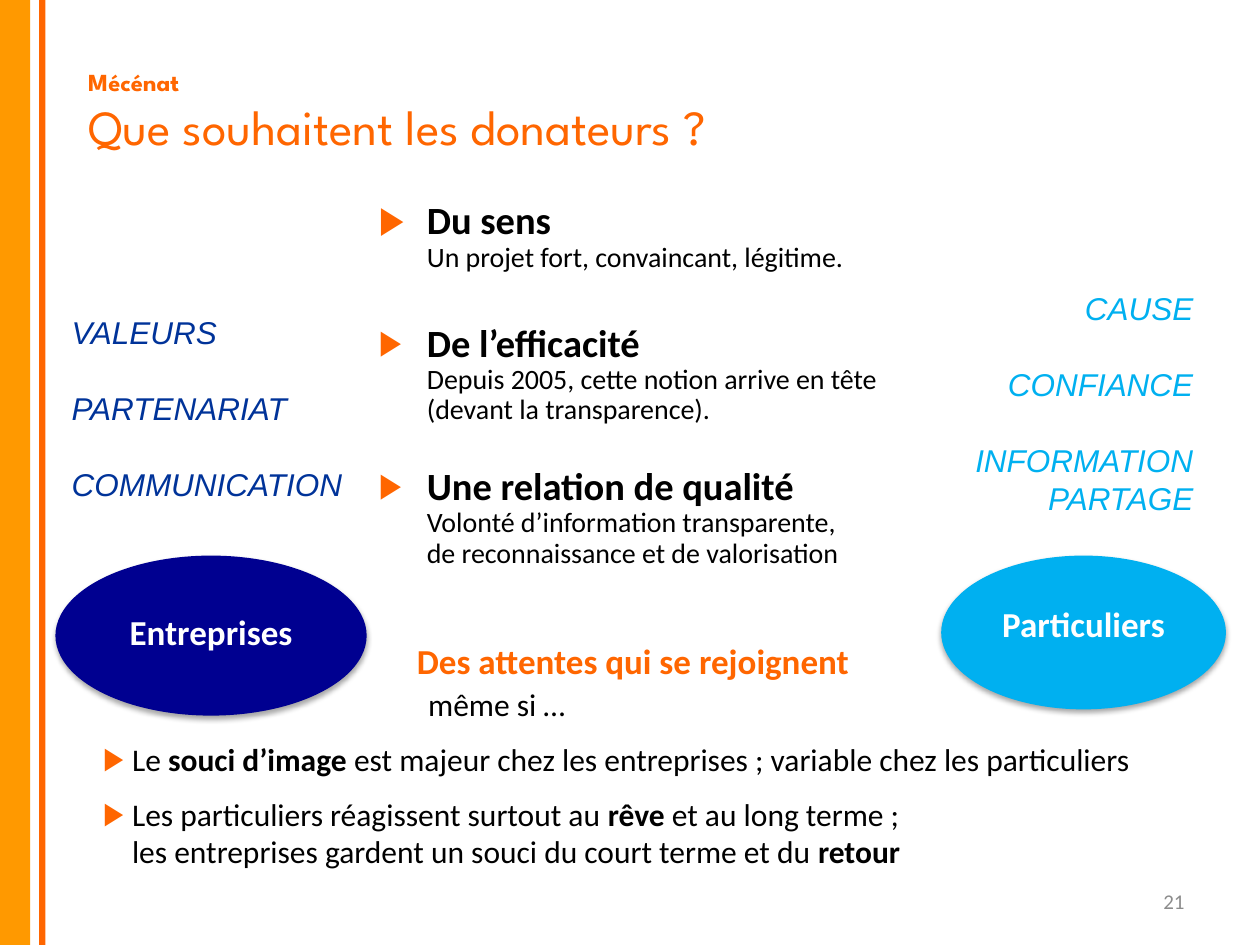
from lxml import etree
from pptx import Presentation
from pptx.dml.color import RGBColor
from pptx.enum.shapes import MSO_SHAPE
from pptx.enum.text import MSO_ANCHOR, MSO_AUTO_SIZE, PP_ALIGN
from pptx.oxml.ns import qn
from pptx.util import Inches, Pt

COLORS = {"amber": "FF9900", "orange": "FF6600", "blue": "003399", "navy": "000090",
          "sky": "00B0F0", "black": "000000", "white": "FFFFFF", "gray": "8C8C8C"}


def add_runs(p, runs, color, font="Calibri", italic=False):
    """Fill a paragraph with (text, size, bold) runs; a newline is a line break."""
    for text, size, bold in runs:
        for i, part in enumerate(text.split("\n")):
            if i:
                p.add_line_break()
            if not part:
                continue
            r = p.add_run()
            r.text = part
            r.font.name, r.font.size = font, Pt(size)
            r.font.bold, r.font.italic = bold, italic
            r.font.color.rgb = RGBColor.from_string(COLORS[color])


def set_bullet(p, indent, percent=100):
    """Give a paragraph an orange triangle bullet with a hanging indent."""
    pPr = p._p.get_or_add_pPr()
    pPr.set("marL", str(Inches(indent)))
    pPr.set("indent", str(-Inches(indent)))
    clr = etree.SubElement(pPr, qn("a:buClr"))
    etree.SubElement(clr, qn("a:srgbClr"), val=COLORS["orange"])
    etree.SubElement(pPr, qn("a:buSzPct"), val=str(percent * 1000))
    etree.SubElement(pPr, qn("a:buFont"), typeface="Arial")
    etree.SubElement(pPr, qn("a:buChar"), char="▶")


prs = Presentation()
prs.slide_width, prs.slide_height = Inches(10), Inches(7.5)
s = prs.slides.add_slide(prs.slide_layouts[5])

# Side bars
for left, width, color in ((0, 0.24, "amber"), (0.31, 0.05, "orange")):
    sp = s.shapes.add_shape(MSO_SHAPE.RECTANGLE, Inches(left), 0, Inches(width), Inches(7.5))
    sp.shadow.inherit = False
    sp.fill.solid()
    sp.fill.fore_color.rgb = RGBColor.from_string(COLORS[color])
    sp.line.fill.background()

# Title
title = s.shapes.title
title.left, title.top, title.width, title.height = map(Inches, (0.6, 0.26, 9, 1.25))
tf = title.text_frame
tf.auto_size = MSO_AUTO_SIZE.NONE
tf.vertical_anchor = MSO_ANCHOR.MIDDLE
tf.paragraphs[0].alignment = PP_ALIGN.LEFT
add_runs(tf.paragraphs[0], [("Mécénat\n", 14, True), ("Que souhaitent les donateurs ?", 28, False)],
         "orange", "League Spartan")

# Keywords of each donor group, with the space before each line
LINE = 21.7
keywords = [
    (0.47, 2.43, 2.37, 1.62, "blue", PP_ALIGN.LEFT,
     [("VALEURS", 0), ("PARTENARIAT", LINE), ("COMMUNICATION", LINE)]),
    (7.62, 2.24, 1.95, 2.22, "sky", PP_ALIGN.RIGHT,
     [("CAUSE", 0), ("CONFIANCE", LINE), ("INFORMATION", LINE), ("PARTAGE", 0)]),
]
for left, top, width, height, color, align, words in keywords:
    tf = s.shapes.add_textbox(Inches(left), Inches(top), Inches(width), Inches(height)).text_frame
    tf.word_wrap = False
    for i, (word, before) in enumerate(words):
        p = tf.add_paragraph() if i else tf.paragraphs[0]
        p.alignment = align
        p.line_spacing, p.space_before = Pt(LINE), Pt(before)
        add_runs(p, [(word, 18, False)], color, "Arial", italic=True)

# Donor expectations
expectations = [
    ("Du sens", "Un projet fort, convaincant, légitime.", 0, 100),
    ("De l’efficacité", "Depuis 2005, cette notion arrive en tête (devant la transparence).", 29, 90),
    ("Une relation de qualité",
     "Volonté d’information transparente,\nde reconnaissance et de valorisation", 23.5, 90),
]
tf = s.shapes.add_textbox(Inches(2.91), Inches(1.55), Inches(4.77), Inches(3.17)).text_frame
tf.word_wrap = True
for i, (head, detail, before, percent) in enumerate(expectations):
    p = tf.add_paragraph() if i else tf.paragraphs[0]
    p.line_spacing, p.space_before = 0.9, Pt(before)
    set_bullet(p, 0.38, percent)
    add_runs(p, [(head + "\n", 22, True), (detail, 16, False)], "black")

# Donor ellipses
ellipses = [
    ("Particuliers", 7.47, 2.26, 1.22, "sky", 0.19),
    ("Entreprises", 0.44, 2.47, 1.27, "navy", 0.11),
]
for name, left, width, height, color, bottom in ellipses:
    sp = s.shapes.add_shape(MSO_SHAPE.OVAL, Inches(left), Inches(4.41), Inches(width), Inches(height))
    sp.fill.solid()
    sp.fill.fore_color.rgb = RGBColor.from_string(COLORS[color])
    sp.line.fill.background()
    sp.shadow.inherit = False
    effects = sp._element.spPr.find(qn("a:effectLst"))
    shadow = etree.SubElement(effects, qn("a:outerShdw"), blurRad=str(Pt(3.1)),
                              dist=str(Pt(1.8)), dir="5400000", rotWithShape="0")
    clr = etree.SubElement(shadow, qn("a:srgbClr"), val=COLORS["black"])
    etree.SubElement(clr, qn("a:alpha"), val="35000")
    tf = sp.text_frame
    tf.margin_bottom = Inches(bottom)
    tf.vertical_anchor = MSO_ANCHOR.MIDDLE
    tf.paragraphs[0].alignment = PP_ALIGN.CENTER
    add_runs(tf.paragraphs[0], [(name, 20, True)], "white")

# Shared expectations
tf = s.shapes.add_textbox(Inches(3.21), Inches(5.03), Inches(4.77), Inches(0.44)).text_frame
tf.word_wrap = True
add_runs(tf.paragraphs[0], [("Des attentes qui se rejoignent", 20, True)], "orange")

# Differences between the groups
differences = [
    [("Le ", 18, False), ("souci d’image ", 18, True),
     ("est majeur chez les entreprises ; variable chez les particuliers", 18, False)],
    [("Les particuliers réagissent surtout au ", 18, False), ("rêve ", 18, True),
     ("et au long terme ;\nles entreprises gardent un souci du court terme et du ", 18, False),
     ("retour", 18, True)],
]
tf = s.shapes.add_textbox(Inches(0.72), Inches(5.39), Inches(8.87), Inches(1.58)).text_frame
tf.word_wrap = True
p = tf.paragraphs[0]
p._p.get_or_add_pPr().set("marL", str(Inches(2.58)))
add_runs(p, [("même si …", 18, False)], "black")
for runs in differences:
    p = tf.add_paragraph()
    p.space_before = Pt(9.6)
    set_bullet(p, 0.23)
    add_runs(p, runs, "black")

# Page number
tf = s.shapes.add_textbox(Inches(7.17), Inches(6.95), Inches(2.33), Inches(0.4)).text_frame
tf.word_wrap = True
tf.vertical_anchor = MSO_ANCHOR.MIDDLE
tf.paragraphs[0].alignment = PP_ALIGN.RIGHT
add_runs(tf.paragraphs[0], [("21", 12, False)], "gray")

prs.save("out.pptx")
